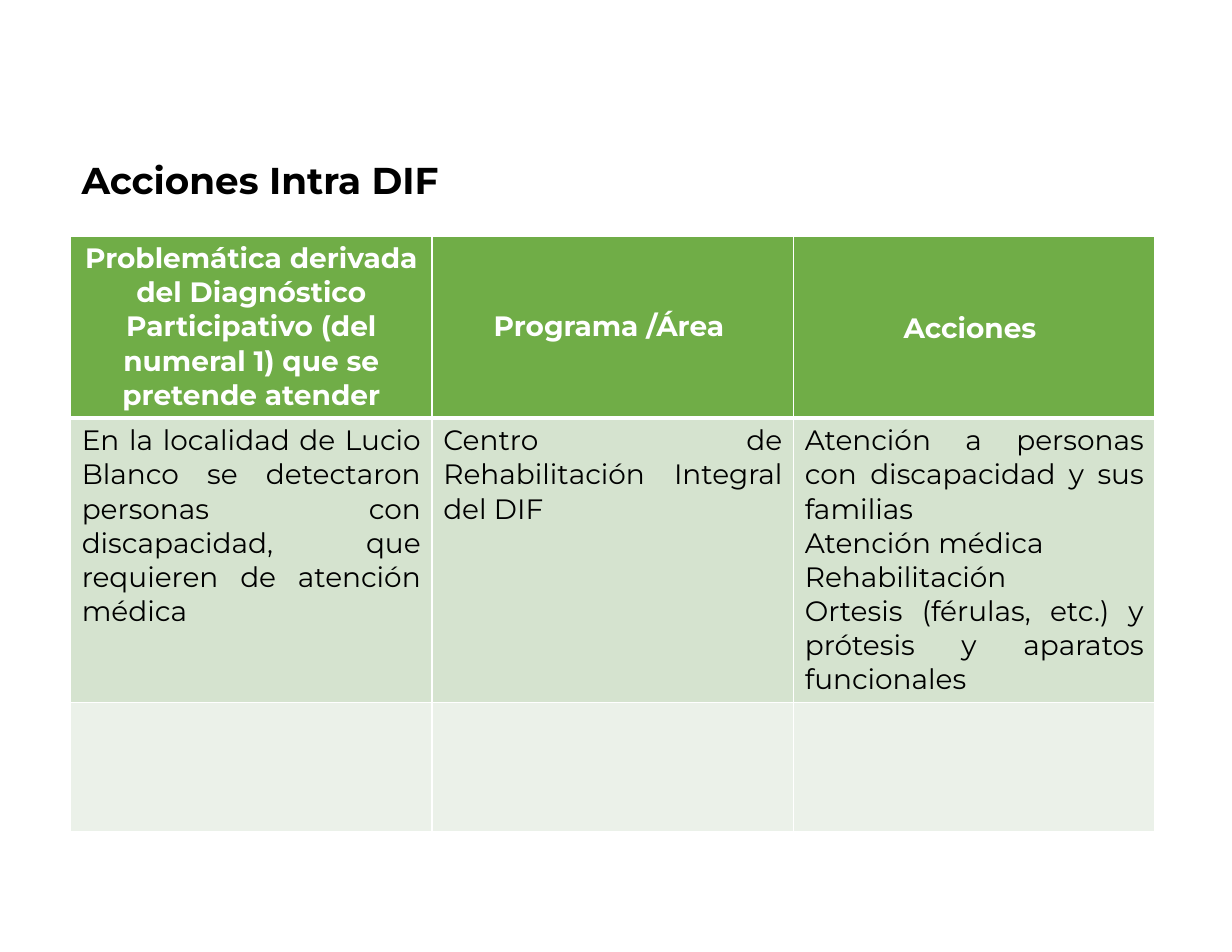
import dataclasses
import typing

import lxml.etree
import pptx
import pptx.dml.color
import pptx.enum.text
import pptx.oxml.ns
import pptx.util

Cm = pptx.util.Cm
Pt = pptx.util.Pt
Align = pptx.enum.text.PP_ALIGN
Anchor = pptx.enum.text.MSO_ANCHOR

FONT = "Montserrat"
HUES = {
    "head": "70AD47",
    "band": "D5E3CF",
    "pale": "EBF1E9",
    "white": "FFFFFF",
    "black": "000000",
}
LEFT = Cm(1.6)
WIDTH = Cm(8.2)


@dataclasses.dataclass(frozen=True)
class Style:
    fill: str
    ink: str
    bold: bool
    align: Align
    anchor: Anchor
    rule: float


@dataclasses.dataclass(frozen=True)
class Row:
    height: float
    style: Style
    cells: tuple[tuple[str, ...], ...]


HEAD = Style("head", "white", True, Align.CENTER, Anchor.MIDDLE, 3)
BAND = Style("band", "black", False, Align.JUSTIFY, Anchor.TOP, 1)
PALE = dataclasses.replace(BAND, fill="pale")

ROWS = (
    Row(3.76, HEAD, (
        ("Problemática derivada del Diagnóstico Participativo "
         "(del numeral 1) que se pretende atender",),
        ("Programa /Área ",),
        ("Acciones",),
    )),
    Row(6.22, BAND, (
        ("En la localidad de Lucio Blanco se detectaron personas con "
         "discapacidad, que requieren de atención médica",),
        ("Centro de Rehabilitación Integral del DIF ",),
        ("Atención a personas con discapacidad y sus familias",
         "Atención médica",
         "Rehabilitación ",
         "Ortesis (férulas, etc.) y prótesis y aparatos funcionales "),
    )),
    Row(2.92, PALE, ((), (), ())),
)


def tint(name: str) -> pptx.dml.color.RGBColor:
    return pptx.dml.color.RGBColor.from_string(HUES[name])


def add_run(para: typing.Any, text: str, size: float, ink: str, bold: bool) -> None:
    run = para.add_run()
    run.text = text
    run.font.name = FONT
    run.font.size = Pt(size)
    run.font.bold = bold
    run.font.color.rgb = tint(ink)


def add_rules(cell: typing.Any, base: float) -> None:
    qn = pptx.oxml.ns.qn
    props = cell._tc.get_or_add_tcPr()
    sides = (("lnL", 1), ("lnR", 1), ("lnT", 1), ("lnB", base))
    for spot, (side, width) in enumerate(sides):
        line = lxml.etree.Element(qn(f"a:{side}"), w=str(Pt(width)))
        fill = lxml.etree.SubElement(line, qn("a:solidFill"))
        lxml.etree.SubElement(fill, qn("a:srgbClr"), val=HUES["white"])
        props.insert(spot, line)


def fill_cell(cell: typing.Any, lines: tuple[str, ...], style: Style) -> None:
    cell.fill.solid()
    cell.fill.fore_color.rgb = tint(style.fill)
    cell.vertical_anchor = style.anchor
    add_rules(cell, style.rule)
    frame = cell.text_frame
    for spot, line in enumerate(lines):
        para = frame.add_paragraph() if spot else frame.paragraphs[0]
        para.alignment = style.align
        add_run(para, line, 18, style.ink, style.bold)


def add_grid(slide: typing.Any) -> None:
    count = len(ROWS[0].cells)
    high = Cm(sum(row.height for row in ROWS))
    shape = slide.shapes.add_table(
        len(ROWS), count, LEFT, Cm(5.35), WIDTH * count, high)
    table = shape.table
    for col in table.columns:
        col.width = WIDTH
    for spot, row in enumerate(ROWS):
        table.rows[spot].height = Cm(row.height)
        for cell, lines in zip(table.rows[spot].cells, row.cells):
            fill_cell(cell, lines, row.style)
    add_run(table.cell(0, count - 1).text_frame.paragraphs[0],
            " ", 20, HEAD.ink, HEAD.bold)


def add_title(slide: typing.Any) -> None:
    box = slide.shapes.add_textbox(LEFT, Cm(3.38), Cm(8.69), Cm(1.35))
    frame = box.text_frame
    frame.word_wrap = True
    frame.auto_size = pptx.enum.text.MSO_AUTO_SIZE.SHAPE_TO_FIT_TEXT
    para = frame.paragraphs[0]
    para.line_spacing = 1.07
    para.space_after = Pt(6)
    add_run(para, "Acciones Intra DIF", 24, "black", True)


def main() -> None:
    deck = pptx.Presentation()
    deck.slide_width = Cm(27.94)
    deck.slide_height = Cm(21.59)
    slide = deck.slides.add_slide(deck.slide_layouts[6])
    add_grid(slide)
    add_title(slide)
    deck.save("out.pptx")


if __name__ == "__main__":
    main()
